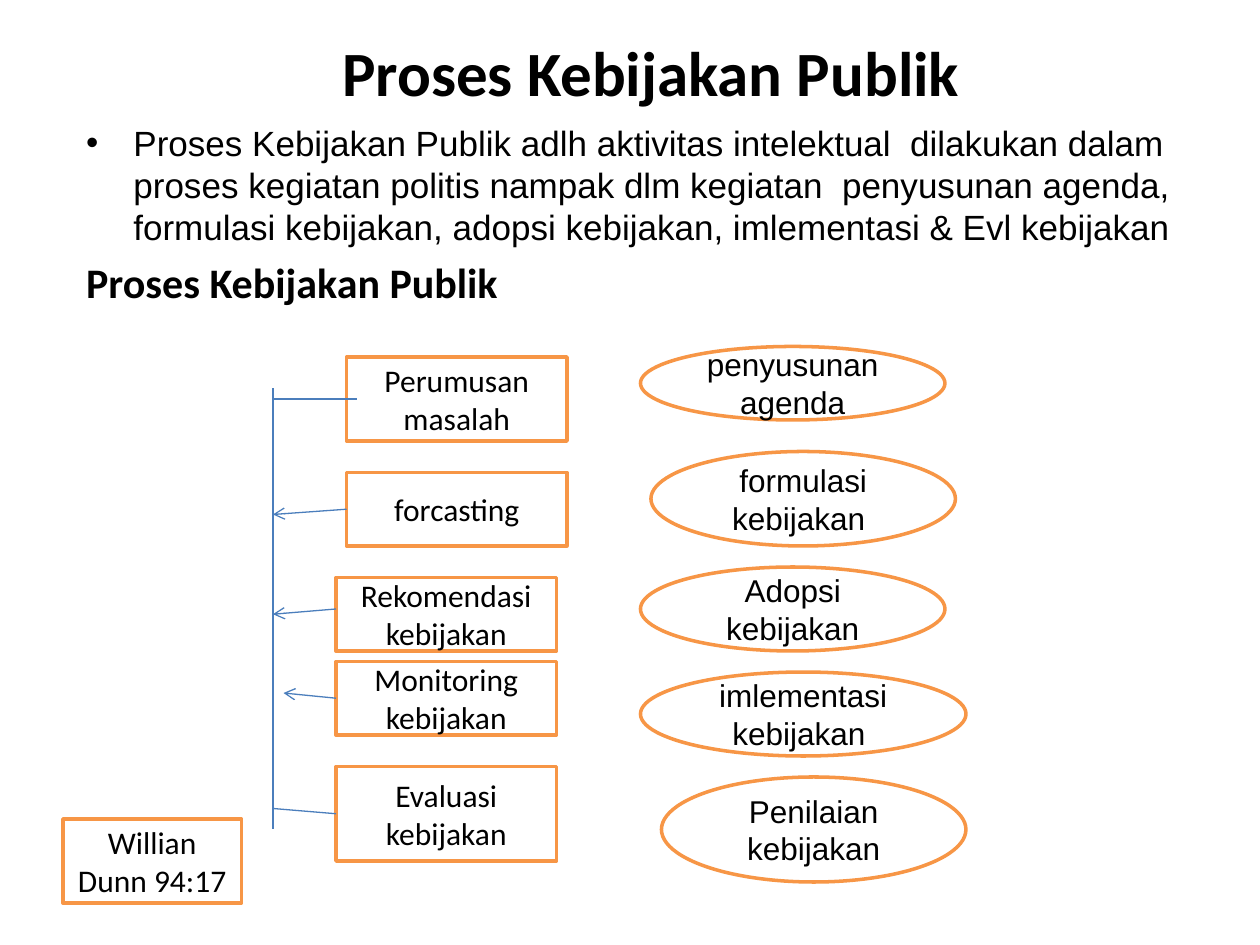
from dataclasses import dataclass

import pptx
import pptx.dml.color
import pptx.enum.shapes
import pptx.enum.text
import pptx.oxml
import pptx.oxml.ns
import pptx.util

Pt = pptx.util.Pt
RGBColor = pptx.dml.color.RGBColor
Shape = pptx.enum.shapes.MSO_SHAPE
Align = pptx.enum.text.PP_ALIGN
Anchor = pptx.enum.text.MSO_ANCHOR

BLACK = RGBColor(0x00, 0x00, 0x00)
WHITE = RGBColor(0xFF, 0xFF, 0xFF)
ORANGE = RGBColor(0xF7, 0x96, 0x46)
BLUE = RGBColor(0x4B, 0x7E, 0xBC)

TRUNK_X = 156


@dataclass
class Node:
    text: str
    left: float
    top: float
    width: float
    height: float
    kind: int = Shape.RECTANGLE
    font: str = "Calibri"


@dataclass
class Stage(Node):
    width: float = 174
    height: float = 48
    kind: int = Shape.OVAL
    font: str = "Arial"


@dataclass
class Link:
    start: tuple[float, float]
    end: tuple[float, float]
    arrow: bool = False


STEPS = [
    Node("Perumusan masalah", 198, 204, 126, 48),
    Node("forcasting", 198, 270, 126, 42),
    Node("Rekomendasi kebijakan", 192, 330, 126, 42),
    Node("Monitoring kebijakan", 192, 378, 126, 42),
    Node("Evaluasi kebijakan", 192, 438, 126, 54),
]
LINKS = [
    Link((204, 228), (TRUNK_X, 228)),
    Link((TRUNK_X, 222), (TRUNK_X, 474)),
    Link((TRUNK_X, 462), (192, 465)),
    Link((198, 291), (TRUNK_X, 294), arrow=True),
    Link((192, 399), (162, 396), arrow=True),
    Link((192, 348), (TRUNK_X, 351), arrow=True),
]
CITATION = Node("Willian Dunn 94:17", 36, 468, 102, 48)
STAGES = [
    Stage("penyusunan agenda", 366, 198, height=42),
    Stage("formulasi kebijakan ", 372, 258, height=54),
    Stage("Adopsi kebijakan", 366, 324),
    Stage("imlementasi kebijakan ", 366, 384, width=186),
    Stage("Penilaian kebijakan", 378, 444, height=60),
]


def place(box, left: float, top: float, width: float, height: float) -> None:
    box.left, box.top, box.width, box.height = map(Pt, (left, top, width, height))


def format_runs(para, font: str, size: float, bold: bool = False) -> None:
    for span in para.runs:
        span.font.name = font
        span.font.size = Pt(size)
        span.font.bold = bold
        span.font.color.rgb = BLACK


def draw_node(page, node: Node) -> None:
    box = page.shapes.add_shape(
        node.kind, Pt(node.left), Pt(node.top), Pt(node.width), Pt(node.height)
    )
    box.shadow.inherit = False
    box.fill.solid()
    box.fill.fore_color.rgb = WHITE
    box.line.color.rgb = ORANGE
    box.line.width = Pt(2)
    frame = box.text_frame
    frame.text = node.text
    frame.word_wrap = True
    frame.vertical_anchor = Anchor.MIDDLE
    frame.paragraphs[0].alignment = Align.CENTER
    format_runs(frame.paragraphs[0], node.font, 18)


def draw_link(page, link: Link) -> None:
    line = page.shapes.add_connector(
        pptx.enum.shapes.MSO_CONNECTOR.STRAIGHT, *map(Pt, link.start + link.end)
    )
    line.line.color.rgb = BLUE
    line.line.width = Pt(0.75)
    if link.arrow:
        head = pptx.oxml.parse_xml(
            f'<a:tailEnd {pptx.oxml.ns.nsdecls("a")} type="arrow"/>'
        )
        line.line._get_or_add_ln().append(head)
    effects = pptx.oxml.parse_xml(f'<a:effectLst {pptx.oxml.ns.nsdecls("a")}/>')
    line._element.spPr.append(effects)


def write_title(page) -> None:
    title = page.shapes.title
    place(title, 60, 21.6, 624, 38.4)
    frame = title.text_frame
    frame.text = "Proses Kebijakan Publik"
    frame.auto_size = pptx.enum.text.MSO_AUTO_SIZE.NONE
    frame.vertical_anchor = Anchor.MIDDLE
    frame.paragraphs[0].alignment = Align.CENTER
    format_runs(frame.paragraphs[0], "Calibri", 36, bold=True)


def write_body(page) -> None:
    body = page.placeholders[1]
    place(body, 42, 66, 636, 450)
    frame = body.text_frame
    frame.auto_size = pptx.enum.text.MSO_AUTO_SIZE.NONE
    frame.text = (
        "Proses Kebijakan Publik adlh aktivitas intelektual  dilakukan dalam "
        "proses kegiatan politis nampak dlm kegiatan  penyusunan agenda, "
        "formulasi kebijakan, adopsi kebijakan, imlementasi & Evl kebijakan"
    )
    format_runs(frame.paragraphs[0], "Arial", 20)

    # The subheading keeps the hanging indent but has no bullet
    heading = frame.add_paragraph()
    heading.text = "Proses Kebijakan Publik"
    format_runs(heading, "Calibri", 24, bold=True)
    heading._p.get_or_add_pPr().append(
        pptx.oxml.parse_xml(f'<a:buNone {pptx.oxml.ns.nsdecls("a")}/>')
    )


def main() -> None:
    deck = pptx.Presentation()
    deck.slide_width, deck.slide_height = Pt(720), Pt(540)
    page = deck.slides.add_slide(deck.slide_layouts[1])

    write_title(page)
    write_body(page)

    # Analysis steps on the left, joined to the trunk line
    for step in STEPS:
        draw_node(page, step)
    for link in LINKS:
        draw_link(page, link)

    # Citation and policy stages on the right
    for node in [CITATION, *STAGES]:
        draw_node(page, node)

    deck.save("out.pptx")


if __name__ == "__main__":
    main()
